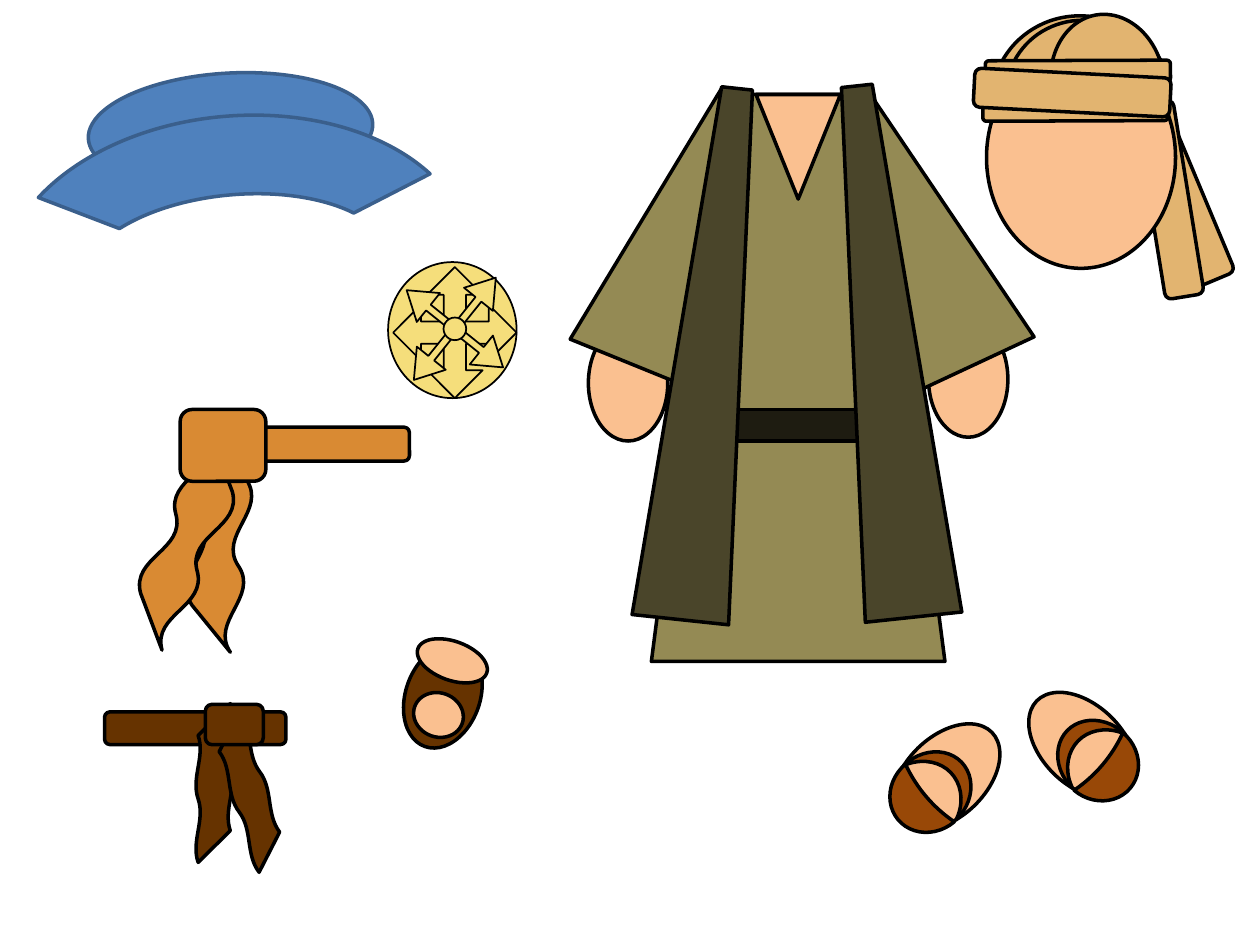
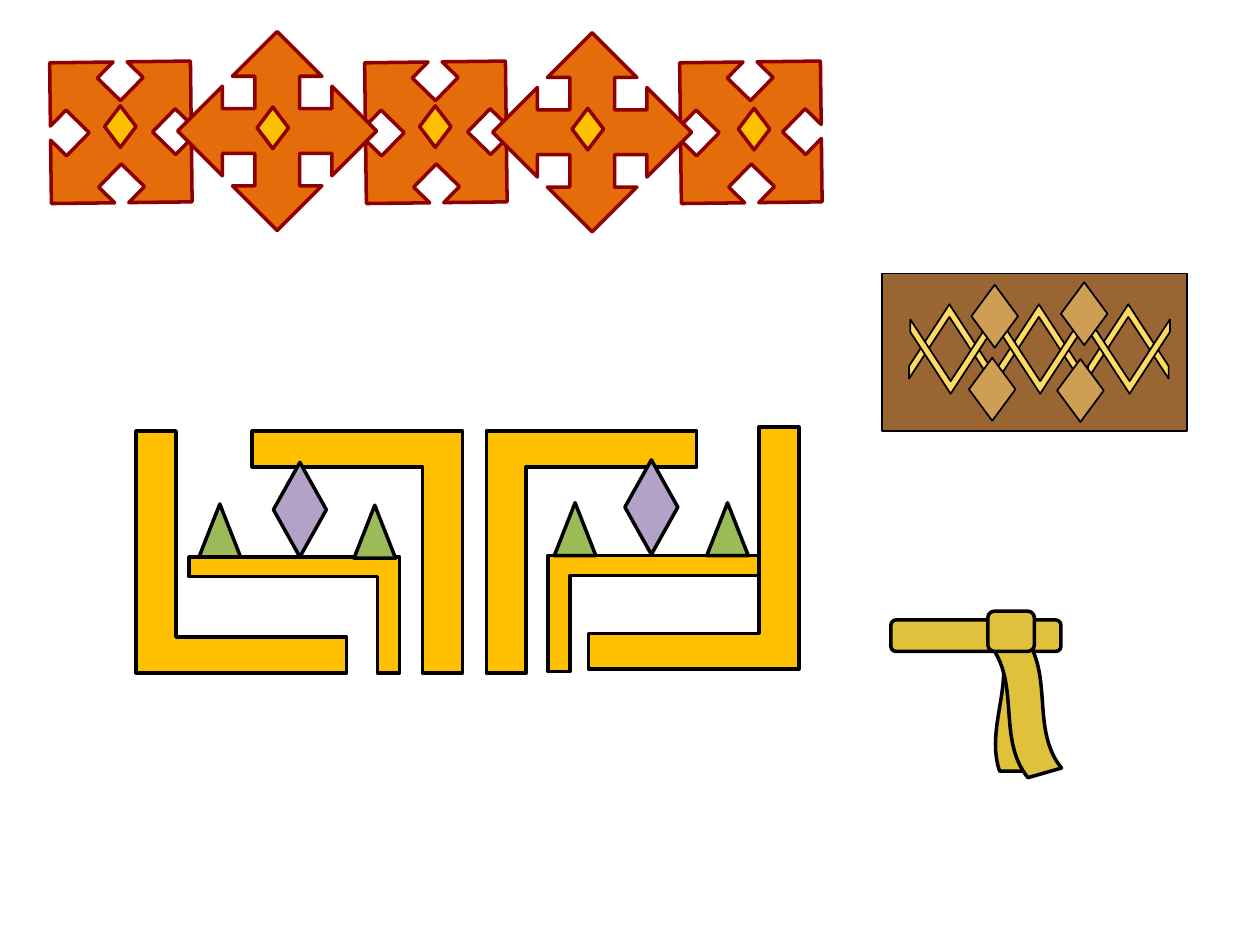
from dataclasses import dataclass, replace

from pptx import Presentation
from pptx.dml.color import RGBColor
from pptx.enum.shapes import MSO_SHAPE
from pptx.util import Inches, Pt

OVAL = MSO_SHAPE.OVAL
MOON = MSO_SHAPE.MOON
CHORD = MSO_SHAPE.CHORD
ARC = MSO_SHAPE.BLOCK_ARC
TRAPEZOID = MSO_SHAPE.TRAPEZOID
TRIANGLE = MSO_SHAPE.ISOSCELES_TRIANGLE
RECTANGLE = MSO_SHAPE.RECTANGLE
ROUNDED = MSO_SHAPE.ROUNDED_RECTANGLE
WAVE = MSO_SHAPE.WAVE
DOUBLE_WAVE = MSO_SHAPE.DOUBLE_WAVE
QUAD_ARROW = MSO_SHAPE.QUAD_ARROW
DIAMOND = MSO_SHAPE.DIAMOND
CORNER = MSO_SHAPE.CORNER
CHEVRON = MSO_SHAPE.CHEVRON

WIDTH, HEIGHT = Inches(10), Inches(7.5)
COLUMN, ROW = WIDTH / 10, HEIGHT / 7.5


@dataclass(frozen=True)
class Theme:
    """Colours and line weights shared by both slides."""

    outline: str = "000000"
    skin: str = "FAC090"
    sandal: str = "984807"
    robe: str = "948A54"
    coat: str = "4A452A"
    belt: str = "1E1C11"
    hat: str = "4F81BD"
    hat_edge: str = "3A5F8C"
    orange_sash: str = "D98A33"
    brown: str = "663300"
    turban: str = "E2B470"
    medallion: str = "F5DE7B"
    tile: str = "E46C0A"
    tile_edge: str = "8E0000"
    gold: str = "FFC000"
    leaf: str = "9BBB59"
    lilac: str = "B3A2C7"
    panel: str = "996633"
    braid: str = "FFD961"
    stud: str = "CF9E55"
    yellow_sash: str = "E0C13C"
    thick: float = 2
    thin: float = 1


THEME = Theme()


@dataclass(frozen=True)
class Piece:
    """One preset shape placed in grid columns and rows."""

    kind: int
    left: float
    top: float
    width: float
    height: float
    fill: str
    rotation: float = 0
    adjust: tuple = ()
    flip: bool = False


def mirrored(piece, axis, drop=0):
    """Return the piece reflected about a vertical axis and moved down."""
    return replace(
        piece,
        left=2 * axis - piece.left - piece.width,
        top=piece.top + drop,
        rotation=-piece.rotation,
        flip=not piece.flip,
    )


def draw(group, piece, edge, weight):
    """Add one piece to a group."""
    shape = group.shapes.add_shape(
        piece.kind,
        round(piece.left * COLUMN),
        round(piece.top * ROW),
        round(piece.width * COLUMN),
        round(piece.height * ROW),
    )
    shape.fill.solid()
    formats = (
        (shape, {"rotation": piece.rotation % 360}),
        (shape.shadow, {"inherit": False}),
        (shape.fill.fore_color, {"rgb": RGBColor.from_string(piece.fill)}),
        (shape.line.color, {"rgb": RGBColor.from_string(edge)}),
        (shape.line, {"width": Pt(weight)}),
    )
    for target, values in formats:
        for name, value in values.items():
            setattr(target, name, value)
    for index, value in enumerate(piece.adjust):
        shape.adjustments[index] = value
    if piece.flip:
        shape._element.spPr.xfrm.set("flipH", "1")


def draw_group(slide, pieces, edge=THEME.outline, weight=THEME.thick):
    """Draw pieces from back to front as one group."""
    group = slide.shapes.add_group_shape()
    for piece in pieces:
        draw(group, piece, edge, weight)


def add_sandals(slide):
    """Draw a sandalled foot and its mirror image."""
    foot = [
        Piece(OVAL, 7.19, 5.66, 0.64, 1.01, THEME.skin, 45.9),
        Piece(MOON, 7.09, 6.1, 0.33, 0.6, THEME.sandal, 319.7, (0.875,)),
        Piece(MOON, 7.33, 5.87, 0.35, 0.6, THEME.sandal, 135.9, (0.34,)),
    ]
    draw_group(slide, foot)
    draw_group(slide, [mirrored(piece, 8.05, -0.25) for piece in foot])


def add_robe(slide):
    """Draw the robe with its sleeves, belt and open coat."""
    hand = Piece(OVAL, 4.67, 2.58, 0.63, 0.92, THEME.skin)
    sleeve = Piece(TRAPEZOID, 4.92, 0.67, 1.08, 2.31, THEME.robe, 22.1, (0.34,))
    coat = Piece(TRAPEZOID, 5.24, 0.69, 0.77, 4.24, THEME.coat, 6.1, (0.34,))
    draw_group(slide, [
        mirrored(hand, 6.335, -0.03),
        hand,
        replace(sleeve, left=6.69, top=0.7, rotation=335),
        sleeve,
        Piece(TRAPEZOID, 5.17, 0.75, 2.33, 4.5, THEME.robe),
        Piece(TRIANGLE, 6, 0.75, 0.67, 0.83, THEME.skin, 180),
        Piece(RECTANGLE, 5.5, 3.25, 1.67, 0.25, THEME.belt),
        coat,
        mirrored(coat, 6.325, -0.02),
    ])


def add_hat(slide):
    """Draw the brimmed hat."""
    draw_group(slide, [
        Piece(OVAL, 0.7, 0.58, 2.26, 0.92, THEME.hat, 356.9),
        Piece(ARC, 0, 0.92, 3.75, 2.5, THEME.hat, 354.8, (123.71, 202.8, 0.25)),
    ], THEME.hat_edge)


def add_sash(slide, fill, band, tails, knot):
    """Draw a sash: band, hanging tails and knot."""
    draw_group(slide, [
        Piece(ROUNDED, *band, fill),
        *(Piece(kind, *box, fill, rotation, adjust)
          for kind, box, rotation, adjust in tails),
        Piece(ROUNDED, *knot, fill),
    ])


def add_shoe(slide):
    """Draw the single brown shoe."""
    draw_group(slide, [
        Piece(OVAL, 3.22, 5.1, 0.59, 0.85, THEME.brown, 19.6),
        Piece(OVAL, 3.28, 5.5, 0.4, 0.35, THEME.skin, 19.6),
        Piece(OVAL, 3.3, 5.09, 0.58, 0.31, THEME.skin, 19.6),
    ])


def add_turban(slide):
    """Draw the blank face with its wrapped turban."""
    cloth = THEME.turban
    dome = (27, 121.6)
    draw_group(slide, [
        Piece(ROUNDED, 8.58, 1.34, 1.56, 0.31, cloth, 67.3),
        Piece(ROUNDED, 8.5, 1.43, 1.56, 0.31, cloth, 80.8),
        Piece(OVAL, 7.83, 0.37, 1.5, 1.76, THEME.skin),
        Piece(CHORD, 7.88, 0.11, 1.44, 1.5, cloth, 133.2, dome),
        Piece(CHORD, 8, 0.14, 1.27, 1.35, cloth, 133.2, dome),
        Piece(MOON, 8.47, -0.06, 0.55, 0.9, cloth, 80.6, (0.875,)),
        Piece(ROUNDED, 7.82, 0.48, 1.47, 0.17, cloth, 359.8),
        Piece(ROUNDED, 7.8, 0.79, 1.47, 0.17, cloth, 359.8),
        Piece(ROUNDED, 7.73, 0.58, 1.56, 0.31, cloth, 3),
    ])


def add_medallion(slide):
    """Draw the round medallion with crossed arrows."""
    fill = THEME.medallion
    draw_group(slide, [
        Piece(OVAL, 3.08, 2.08, 1.02, 1.08, fill),
        Piece(QUAD_ARROW, 3.12, 2.12, 0.98, 1.04, fill, 0, (0.18, 0.225, 0.225)),
        Piece(QUAD_ARROW, 3.12, 2.09, 0.98, 1.04, fill, 38.7, (0.06, 0.15, 0.225)),
        Piece(OVAL, 3.52, 2.52, 0.18, 0.18, fill),
    ], weight=THEME.thin)


def add_frieze(slide):
    """Draw alternating turned and upright tiles with gems."""
    step, size = 2.5, 1.58
    turned = [Piece(QUAD_ARROW, 0.17 + step * index, 0.26, size, size, THEME.tile, 314.3)
              for index in range(3)]
    upright = [Piece(QUAD_ARROW, 1.41 + step * index, 0.25 + 0.01 * index, size, size,
                     THEME.tile) for index in range(2)]
    gem_places = ((0.83, 0.84), (2.04, 0.85), (3.33, 0.84), (4.54, 0.86), (5.86, 0.86))
    gems = [Piece(DIAMOND, *place, 0.25, 0.33, THEME.gold) for place in gem_places]
    draw_group(slide, turned + upright + gems, THEME.tile_edge)


def add_frames(slide):
    """Draw two facing frames, each holding triangles and a diamond."""
    bend = (0.17, 0.19)
    pairs = (
        (Piece(CORNER, 1.08, 3.42, 1.67, 1.92, THEME.gold, 0, bend), 3.71, -0.03),
        (Piece(CORNER, 1.5, 4.42, 1.67, 0.92, THEME.gold, 180, bend), 3.76, -0.01),
        (Piece(CORNER, 2, 3.42, 1.67, 1.92, THEME.gold, 180, bend), 3.765, 0),
        (Piece(TRIANGLE, 1.58, 4, 0.33, 0.42, THEME.leaf), 3.76, -0.01),
        (Piece(TRIANGLE, 2.81, 4.01, 0.33, 0.42, THEME.leaf), 3.77, -0.02),
        (Piece(DIAMOND, 2.17, 3.67, 0.42, 0.75, THEME.lilac), 3.775, -0.02),
    )
    draw_group(slide, [
        side for piece, axis, drop in pairs for side in (piece, mirrored(piece, axis, drop))
    ])


def add_braid(slide):
    """Draw the studded panel with its woven chevrons."""
    pieces = [Piece(RECTANGLE, 7, 2.17, 2.42, 1.25, THEME.panel)]
    for index in range(3):
        for left, top, rotation in ((7.24, 2.39, 270), (7.25, 2.51, 90)):
            pieces.append(Piece(CHEVRON, left + 0.71 * index, top, 0.59, 0.64,
                                THEME.braid, rotation, (0.83,)))
    for place in ((7.71, 2.26), (8.42, 2.24), (7.69, 2.84), (8.39, 2.85)):
        pieces.append(Piece(DIAMOND, *place, 0.37, 0.5, THEME.stud))
    draw_group(slide, pieces, weight=THEME.thin)


def add_clothing(slide):
    """Fill the slide of garments."""
    add_sandals(slide)
    add_robe(slide)
    add_hat(slide)
    orange_wave, brown_wave = (0.125, -0.1), (0.06, 0.1)
    add_sash(slide, THEME.orange_sash, (1.54, 3.39, 1.71, 0.27), (
        (DOUBLE_WAVE, (0.88, 4.08, 1.72, 0.45), 275.3, orange_wave),
        (DOUBLE_WAVE, (0.62, 4.08, 1.72, 0.45), 293.9, orange_wave),
    ), (1.43, 3.25, 0.68, 0.57))
    add_shoe(slide)
    add_turban(slide)
    add_medallion(slide)
    add_sash(slide, THEME.brown, (0.83, 5.65, 1.44, 0.26), (
        (DOUBLE_WAVE, (1.07, 6.07, 1.26, 0.29), 90, brown_wave),
        (DOUBLE_WAVE, (1.35, 6.14, 1.26, 0.29), 71.7, brown_wave),
    ), (1.63, 5.59, 0.46, 0.32))


def add_ornaments(slide):
    """Fill the slide of ornaments."""
    add_frieze(slide)
    add_frames(slide)
    add_braid(slide)
    add_sash(slide, THEME.yellow_sash, (7.07, 4.92, 1.35, 0.25), (
        (WAVE, (7.53, 5.48, 1.01, 0.27), 270, ()),
        (WAVE, (7.59, 5.42, 1.1, 0.37), 254, ()),
    ), (7.84, 4.85, 0.37, 0.32))


def main():
    """Build and save the presentation."""
    presentation = Presentation()
    presentation.slide_width, presentation.slide_height = WIDTH, HEIGHT
    blank = presentation.slide_layouts[6]
    for fill_slide in (add_clothing, add_ornaments):
        fill_slide(presentation.slides.add_slide(blank))
    presentation.save("out.pptx")


if __name__ == "__main__":
    main()
